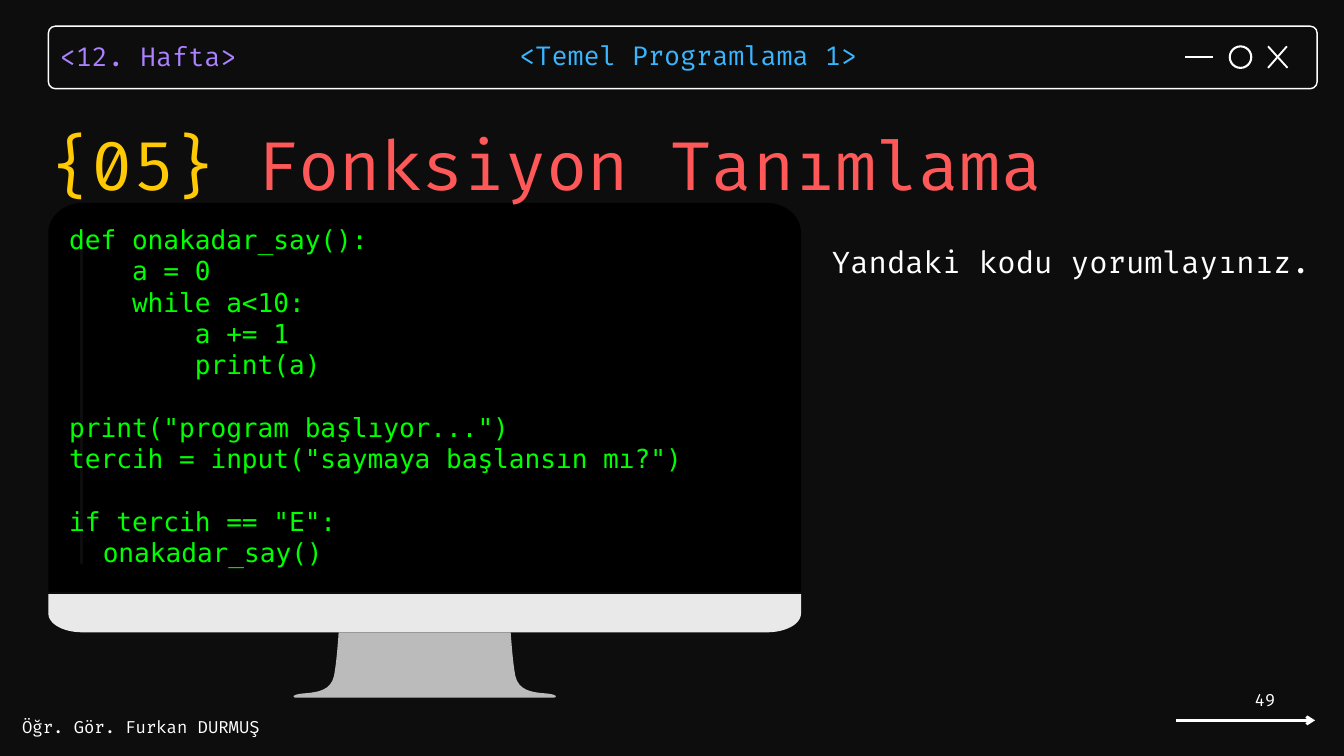
from pptx import Presentation
from pptx.dml.color import RGBColor
from pptx.enum.shapes import MSO_CONNECTOR, MSO_SHAPE
from pptx.enum.text import MSO_ANCHOR, MSO_AUTO_SIZE, PP_ALIGN
from pptx.oxml.ns import qn
from pptx.util import Inches, Pt
from lxml.etree import SubElement

BACKGROUND = RGBColor(0x0D, 0x0D, 0x0D)
WHITE = RGBColor(0xFF, 0xFF, 0xFF)
BLACK = RGBColor(0x00, 0x00, 0x00)
PURPLE = RGBColor(0xAB, 0x81, 0xFF)
BLUE = RGBColor(0x38, 0xB6, 0xFF)
YELLOW = RGBColor(0xFF, 0xCA, 0x04)
RED = RGBColor(0xFF, 0x58, 0x58)
GREEN = RGBColor(0x00, 0xFF, 0x00)
LIGHT_GREY = RGBColor(0xE9, 0xE9, 0xE9)
MID_GREY = RGBColor(0xBB, 0xBB, 0xBB)
SANS, MONO = "Fira Code", "DejaVu Sans Mono"

prs = Presentation()
prs.slide_width, prs.slide_height = Inches(20), Inches(11.25)
CELL = prs.slide_width // 100  # grid of 100 columns by 56.25 rows
s = prs.slides.add_slide(prs.slide_layouts[5])
s.background.fill.solid()
s.background.fill.fore_color.rgb = BACKGROUND


def write(sp, box, paragraphs, size, font=SANS, **formats):
    """Place sp on the grid; each paragraph is a list of (text, colour) runs."""
    sp.left, sp.top, sp.width, sp.height = (int(v * CELL) for v in box)
    tf = sp.text_frame
    frame = dict(margin_left=0, margin_top=0, margin_right=0, margin_bottom=0,
                 word_wrap=True, auto_size=MSO_AUTO_SIZE.NONE,
                 vertical_anchor=MSO_ANCHOR.TOP)
    for name, value in frame.items():
        setattr(tf, name, value)
    for i, runs in enumerate(paragraphs):
        p = tf.add_paragraph() if i else tf.paragraphs[0]
        for name, value in formats.items():
            setattr(p, name, value)
        for text, colour in runs:
            r = p.add_run()
            r.text = text
            r.font.name, r.font.size = font, Pt(size)
            r.font.color.rgb = colour
    return tf


def symmetric(contours, colour, axis=31.6, steps=12):
    """Fill contours given by their left halves; six numbers are a Bézier curve."""
    builder = None
    for contour in contours:
        half = []
        for step in contour:
            if len(step) == 2:
                half.append(step)
                continue
            knots = [half[-1], step[:2], step[2:4], step[4:]]
            for k in range(1, steps + 1):
                t = k / steps
                weights = ((1 - t) ** 3, 3 * t * (1 - t) ** 2, 3 * t * t * (1 - t), t ** 3)
                half.append(tuple(sum(w * q[d] for w, q in zip(weights, knots)) for d in (0, 1)))
        points = half + [(2 * axis - x, y) for x, y in reversed(half)]
        points = [(x * CELL, y * CELL) for x, y in points]
        if builder is None:
            builder = s.shapes.build_freeform(*points[0])
        else:
            builder.move_to(*points[0])
        builder.add_line_segments(points[1:], close=True)
    sp = builder.convert_to_shape()
    sp.shadow.inherit = False
    sp.fill.solid()
    sp.fill.fore_color.rgb = colour
    sp.line.fill.background()


# Window bar and its round button
for kind, box, weight in [
    (MSO_SHAPE.ROUNDED_RECTANGLE, (3.6, 1.95, 94.4, 4.65), 1.5),
    (MSO_SHAPE.OVAL, (91.5, 3.45, 1.6, 1.6), 2.25),
]:
    sp = s.shapes.add_shape(kind, *(int(v * CELL) for v in box))
    sp.shadow.inherit = False
    sp.fill.background()
    sp.line.color.rgb, sp.line.width = WHITE, Pt(weight)
    if kind == MSO_SHAPE.ROUNDED_RECTANGLE:
        sp.adjustments[0] = 0.11

# Close cross, minimise dash and page arrow
for ends, weight, arrow in [
    ((94.35, 3.45, 95.8, 5.05), 2, False),
    ((95.75, 3.45, 94.35, 5.05), 2, False),
    ((88.2, 4.25, 90.25, 4.25), 2, False),
    ((87.5, 53.6, 97.85, 53.6), 3, True),
]:
    line = s.shapes.add_connector(MSO_CONNECTOR.STRAIGHT, *(int(v * CELL) for v in ends))
    line.line.color.rgb, line.line.width = WHITE, Pt(weight)
    if arrow:
        SubElement(line.line._get_or_add_ln(), qn("a:tailEnd"), type="arrow")
    SubElement(line.element.spPr, qn("a:effectLst"))

# Monitor: case with its opening, chin, stand
symmetric([
    [(6.15, 15.1), (4.75, 15.1, 3.6, 16.1, 3.6, 17.3), (3.6, 44.05)],
    [(5.95, 17.4), (5.95, 41.95)],
], BLACK)
symmetric([[(3.6, 44.2), (3.6, 45.65), (3.6, 46.45, 4.75, 47.05, 6.15, 47.05)]], LIGHT_GREY)
symmetric([[(25.2, 47.05), (25.2, 47.05, 25.05, 49.35, 24.85, 50.3),
            (24.5, 51.9, 22.45, 51.4, 21.9, 51.75),
            (21.8, 51.8, 21.85, 51.9, 21.95, 51.9)]], MID_GREY)
screen = s.shapes.add_shape(MSO_SHAPE.RECTANGLE,
                            *(int(v * CELL) for v in (6.25, 16.6, 51.45, 26.7)))
screen.shadow.inherit = False
screen.fill.solid()
screen.fill.fore_color.rgb = BLACK
screen.line.color.rgb, screen.line.width = BLACK, Pt(2)

# Code on the screen; a block's first line is set off by one line's height
blocks = [
    ["def onakadar_say():", "    a = 0", "    while a<10:", "        a += 1", "        print(a)"],
    ['print("program başlıyor...")', 'tercih = input("saymaya başlansın mı?")'],
    ['if tercih == "E":', "\tonakadar_say()"],
]
tf = write(s.shapes.add_textbox(0, 0, 0, 0), (5.15, 16.6, 52.9, 25.9),
           [[(text, GREEN)] for block in blocks for text in block], 28, MONO)
first = 0
for block in blocks[:-1]:
    first += len(block)
    tf.paragraphs[first].space_before = Pt(33.5)

# Labels
for text, box, size, colour, formats in [
    ("<12. Hafta>", (4.45, 2.6, 17, 2.65), 28, PURPLE, {"line_spacing": Pt(39.2)}),
    ("<Temel Programlama 1>", (38.65, 2.55, 26.45, 2.65), 28, BLUE, {"line_spacing": Pt(39.2)}),
    ("Öğr. Gör. Furkan DURMUŞ", (1.65, 53.35, 18.35, 1.5), 18, WHITE, {}),
    ("Yandaki kodu yorumlayınız.", (61.9, 18.1, 35.95, 2.7), 32, WHITE,
     {"alignment": PP_ALIGN.JUSTIFY}),
    ("49", (84.25, 51.3, 10.65, 1.5), 18, WHITE, {"alignment": PP_ALIGN.RIGHT}),
]:
    write(s.shapes.add_textbox(0, 0, 0, 0), box, [[(text, colour)]], size, **formats)

# Title, in front of the monitor
title = s.shapes.title
write(title, (3.75, 8.05, 96.25, 6.9), [[("{05} ", YELLOW), ("Fonksiyon Tanımlama", RED)]], 72,
      alignment=PP_ALIGN.LEFT, line_spacing=Pt(102.6))
title.element.getparent().append(title.element)

prs.save("out.pptx")
